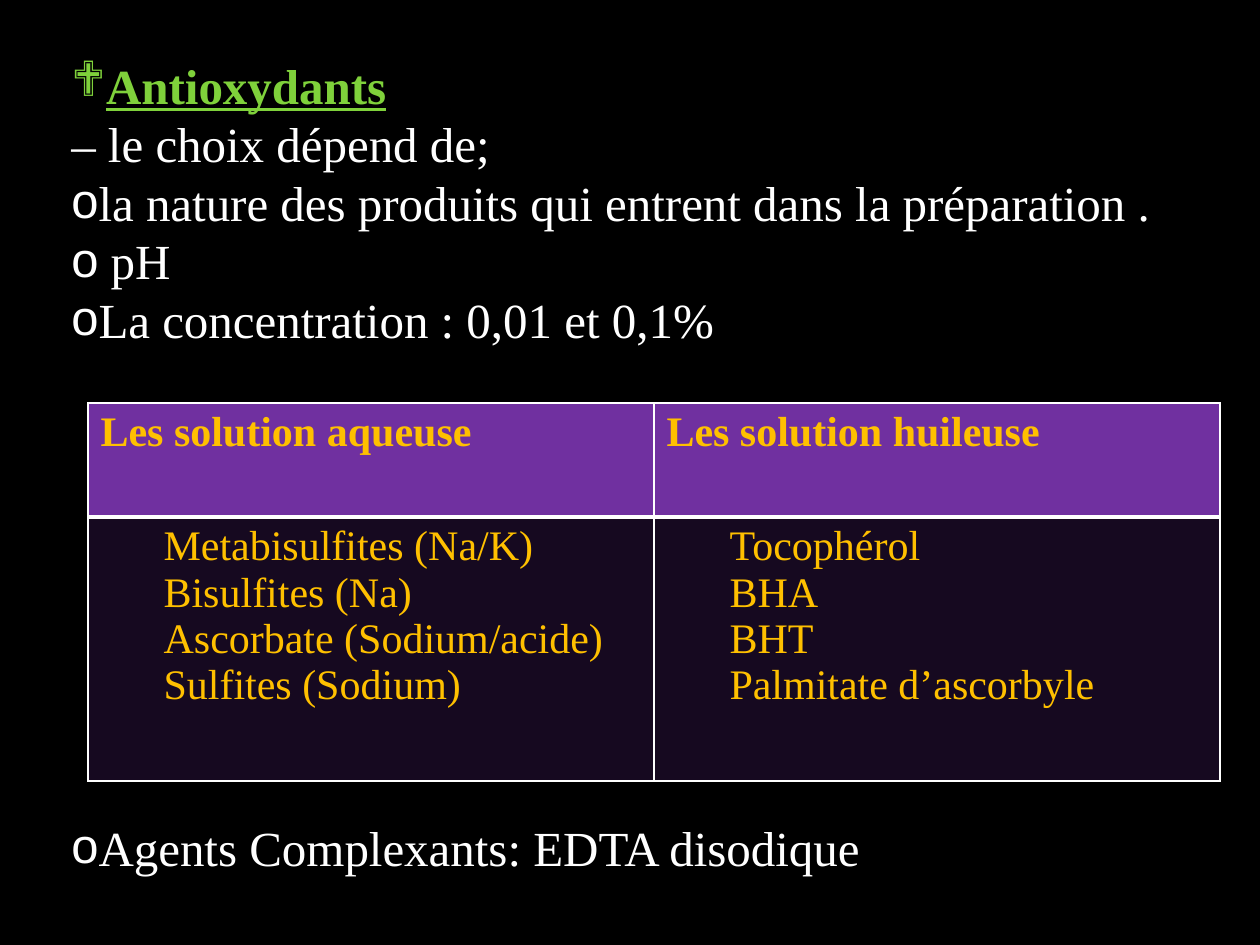
from lxml import etree
from pptx import Presentation
from pptx import util as u
from pptx.dml.color import RGBColor
from pptx.oxml import ns

PX = 914400 // 126
FONT = "Times New Roman"
WHITE, GREEN, GOLD, PURPLE = "FFFFFF", "7FD13B", "FFC000", "7030A0"


def color(value):
    return RGBColor.from_string(value)


def format_runs(para, size, value, bold=False):
    for span in para.runs:
        span.font.name = FONT
        span.font.size = u.Pt(size)
        span.font.bold = bold
        span.font.color.rgb = color(value)


deck = Presentation()
deck.slide_width, deck.slide_height = u.Inches(10), u.Inches(7.5)
page = deck.slides.add_slide(deck.slide_layouts[6])
page.background.fill.solid()
page.background.fill.fore_color.rgb = color("000000")

# Text above and below the table: bullet, bullet font, wording
lines = [
    ("❖", "Wingdings", "Antioxydants"),
    (None, None, "– le choix dépend de;"),
    ("o", "Arial", "la nature des produits qui entrent dans la préparation ."),
    ("o", "Arial", " pH"),
    ("o", "Arial", "La concentration : 0,01 et 0,1%"),
    ("o", "Arial", "Agents Complexants: EDTA disodique"),
]
LINE_HEIGHT = 33.5
box = page.shapes.add_textbox(59 * PX, 49 * PX, 1152 * PX, 903 * PX)
frame = box.text_frame
frame.word_wrap = True
frame.text = "\n".join(wording for _, _, wording in lines)
for para, (bullet, bullet_font, _) in zip(frame.paragraphs, lines):
    para.line_spacing = u.Pt(LINE_HEIGHT)
    format_runs(para, 28, WHITE)
    if bullet:
        props = para._p.get_or_add_pPr()
        etree.SubElement(props, ns.qn("a:buFont"), typeface=bullet_font)
        etree.SubElement(props, ns.qn("a:buChar"), char=bullet)

heading, closing = frame.paragraphs[0], frame.paragraphs[-1]
format_runs(heading, 28, GREEN, bold=True)
heading.runs[0].font.underline = True
closing.space_before = u.Pt(8 * LINE_HEIGHT)  # room for the table

# Table of antioxidants by type of solution
solutions = {
    "Les solution aqueuse": [
        "Metabisulfites (Na/K)", "Bisulfites (Na)",
        "Ascorbate (Sodium/acide)", "Sulfites (Sodium)",
    ],
    "Les solution huileuse": [
        "Tocophérol", "BHA", "BHT", "Palmitate d’ascorbyle",
    ],
}
table = page.shapes.add_table(
    2, 2, 88 * PX, 403 * PX, 1132 * PX, 378 * PX).table
table.rows[0].height, table.rows[1].height = 114 * PX, 264 * PX

for column, (title, products) in enumerate(solutions.items()):
    for row, wording in enumerate([title, "\n".join(products)]):
        cell = table.cell(row, column)
        cell.text_frame.text = wording
        for para in cell.text_frame.paragraphs:
            format_runs(para, 24, GOLD, bold=row == 0)
            if row == 1:
                para._p.get_or_add_pPr().set("marL", str(u.Inches(0.5)))

        props = cell._tc.get_or_add_tcPr()
        divider = "lnB" if row == 0 else "lnT"
        for side in ("lnL", "lnR", "lnT", "lnB"):
            width = u.Pt(3 if side == divider else 1)
            border = etree.SubElement(props, ns.qn(f"a:{side}"), w=str(width))
            paint = etree.SubElement(border, ns.qn("a:solidFill"))
            etree.SubElement(paint, ns.qn("a:srgbClr"), val=WHITE)

        cell.fill.solid()
        cell.fill.fore_color.rgb = color(PURPLE)
        if row == 1:
            tint = props.find(ns.qn("a:solidFill"))[0]
            etree.SubElement(tint, ns.qn("a:alpha"), val="20000")

deck.save("out.pptx")
